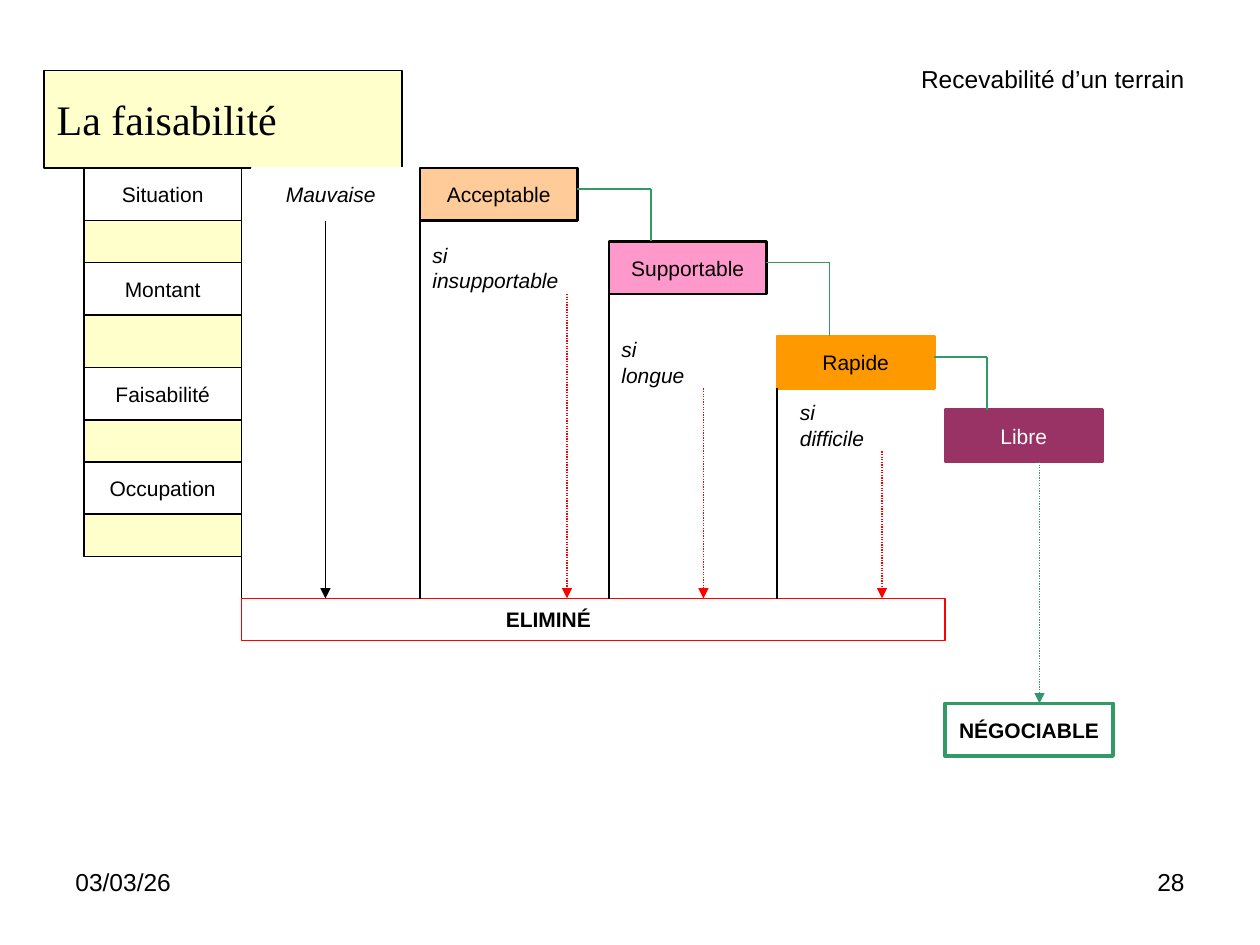
from lxml import etree
from pptx import Presentation, util as u
from pptx.dml.color import RGBColor
from pptx.enum import dml, shapes, text
from pptx.oxml.ns import qn

# Content: the grid has 12 cells to the inch
CELL = 1 / 12
BOX_W, BOX_H = 15, 5
TITLE = ("La faisabilité", (4.2, 6.7, 34.1, 9.3))
CRITERIA_X = 8
CRITERIA = [("Situation", 16), ("Montant", 25), ("Faisabilité", 35), ("Occupation", 44)]
CRITERIA_END = 53
BAD = ("Mauvaise", 24, 16)
BAR = (23, 57, 67, 4)
ELIMINATED = ("ELIMINÉ", (47, 58, 15, 2))
NEGOTIABLE = ("NÉGOCIABLE", (90, 67, 16, 5))
# label, x, y, fill, line, x of the elbow, condition (words, box, x of its arrow)
STEPS = [
    ("Acceptable", 40, 16, "peach", "black", 62, (["si", "insupportable"], (40, 23, 15, 5), 54)),
    ("Supportable", 58, 23, "pink", "black", 79, (["si", "longue"], (58, 32, 15, 5), 67)),
    ("Rapide", 74, 32, "orange", "orange", 94, (["si", "difficile"], (75, 38, 10, 5), 84)),
    ("Libre", 90, 39, "plum", "plum", None, None),
]
# words, box, alignment, anchor
MARGIN_TEXTS = [
    ("Recevabilité d’un terrain", (63, 4, 51, 7), "r", "m"),
    ("03/03/26", (6, 82, 28, 6.2), "l", "t"),
    ("28", (86, 82, 28, 6.2), "r", "t"),
]

THEME = {
    "colors": {"black": "000000", "white": "FFFFFF", "cream": "FFFFCC", "peach": "FFCC99",
               "pink": "FF99CC", "orange": "FF9900", "plum": "993366", "red": "FF0000",
               "green": "339966"},
    "sizes": {"title": 24, "margin": 14, "label": 12},
    "fonts": {"title": "Times New Roman", "body": "Arial"},
}
ALIGN = {"l": text.PP_ALIGN.LEFT, "c": text.PP_ALIGN.CENTER, "r": text.PP_ALIGN.RIGHT}
ANCHOR = {"t": text.MSO_ANCHOR.TOP, "m": text.MSO_ANCHOR.MIDDLE}


def color(name):
    return RGBColor.from_string(THEME["colors"][name])


def cells(values):
    return [u.Inches(v * CELL) for v in values]


def paint(sp, fill, line, width):
    sp.fill.solid()
    sp.fill.fore_color.rgb = color(fill)
    sp.line.color.rgb = color(line)
    sp.line.width = u.Pt(width)


def write(sp, lines, role="label", ink="black", align="c", anchor="m", wrap=False, **style):
    tf = sp.text_frame
    tf.word_wrap = wrap
    tf.vertical_anchor = ANCHOR[anchor]
    font = {"size": u.Pt(THEME["sizes"][role]),
            "name": THEME["fonts"].get(role, THEME["fonts"]["body"]), **style}
    for i, words in enumerate(lines):
        p = tf.add_paragraph() if i else tf.paragraphs[0]
        p.alignment = ALIGN[align]
        r = p.add_run()
        r.text = words
        r.font.color.rgb = color(ink)
        for key, value in font.items():
            setattr(r.font, key, value)


def box(s, at, fill="white", line="black", width=1, lines=(), **style):
    sp = s.shapes.add_shape(shapes.MSO_SHAPE.RECTANGLE, *cells(at))
    sp.shadow.inherit = False
    paint(sp, fill, line, width)
    if lines:
        write(sp, lines, **style)


def link(s, x1, y1, x2, y2, ink="black", width=0.75, arrow=False, dotted=False):
    c = s.shapes.add_connector(shapes.MSO_CONNECTOR.STRAIGHT, *cells((x1, y1, x2, y2)))
    c.line.color.rgb = color(ink)
    c.line.width = u.Pt(width)
    if dotted:
        c.line.dash_style = dml.MSO_LINE.ROUND_DOT
    if arrow:
        etree.SubElement(c.line._get_or_add_ln(), qn("a:tailEnd"), type="triangle")
    etree.SubElement(c._element.spPr, qn("a:effectLst"))


def main():
    prs = Presentation()
    prs.slide_width, prs.slide_height = u.Inches(10), u.Inches(7.5)
    s = prs.slides.add_slide(prs.slide_layouts[5])

    # Title
    title = s.shapes.title
    title.left, title.top, title.width, title.height = cells(TITLE[1])
    paint(title, "cream", "black", 0.75)
    write(title, [TITLE[0]], role="title", align="l", wrap=True)

    # Date, heading and slide number
    for words, at, align, anchor in MARGIN_TEXTS:
        write(s.shapes.add_textbox(*cells(at)), [words], role="margin",
              align=align, anchor=anchor, wrap=True)

    # Criteria column, each label followed by a band down to the next one
    ends = [y for _, y in CRITERIA[1:]] + [CRITERIA_END]
    for (label, y), end in zip(CRITERIA, ends):
        below = y + BOX_H
        box(s, (CRITERIA_X, y, BOX_W, BOX_H), lines=[label])
        box(s, (CRITERIA_X, below, BOX_W, end - below), fill="cream", width=0.75)

    # Elimination bar and the direct way to it
    bar_x, bar_y, _, bar_h = BAR
    label, x, y = BAD
    box(s, (x, y, BOX_W, BOX_H), line="white", lines=[label], italic=True)
    link(s, bar_x, y + BOX_H, bar_x, bar_y + bar_h)
    box(s, BAR, line="red")
    box(s, ELIMINATED[1], line="white", lines=[ELIMINATED[0]], align="l", bold=True)
    link(s, x + BOX_W / 2 - 0.5, y + BOX_H, x + BOX_W / 2 - 0.5, bar_y, arrow=True)

    # Staircase of steps, with the condition that eliminates under each
    for label, x, y, fill, line, elbow, condition in STEPS:
        box(s, (x, y, BOX_W, BOX_H), fill, line, 1.5, [label],
            ink="white" if fill == "plum" else "black")
        if condition:
            words, at, arrow_x = condition
            box(s, at, line="white", lines=words, align="l", italic=True)
            link(s, x, y + BOX_H, x, bar_y, width=1)
            link(s, arrow_x, at[1] + at[3], arrow_x, bar_y, "red", arrow=True, dotted=True)

    # Elbows from one step to the next
    for (_, x, y, _, _, elbow, _), following in zip(STEPS, STEPS[1:]):
        link(s, x + BOX_W, y + 2, elbow, y + 2, "green")
        link(s, elbow, y + 2, elbow, following[2], "green")

    # Outcome of the last step
    label, at = NEGOTIABLE
    box(s, at, line="green", width=2.25, lines=[label], bold=True)
    last_x, last_y = STEPS[-1][1:3]
    link(s, last_x + 9, last_y + BOX_H, last_x + 9, at[1], "green", arrow=True, dotted=True)

    prs.save("out.pptx")


if __name__ == "__main__":
    main()
